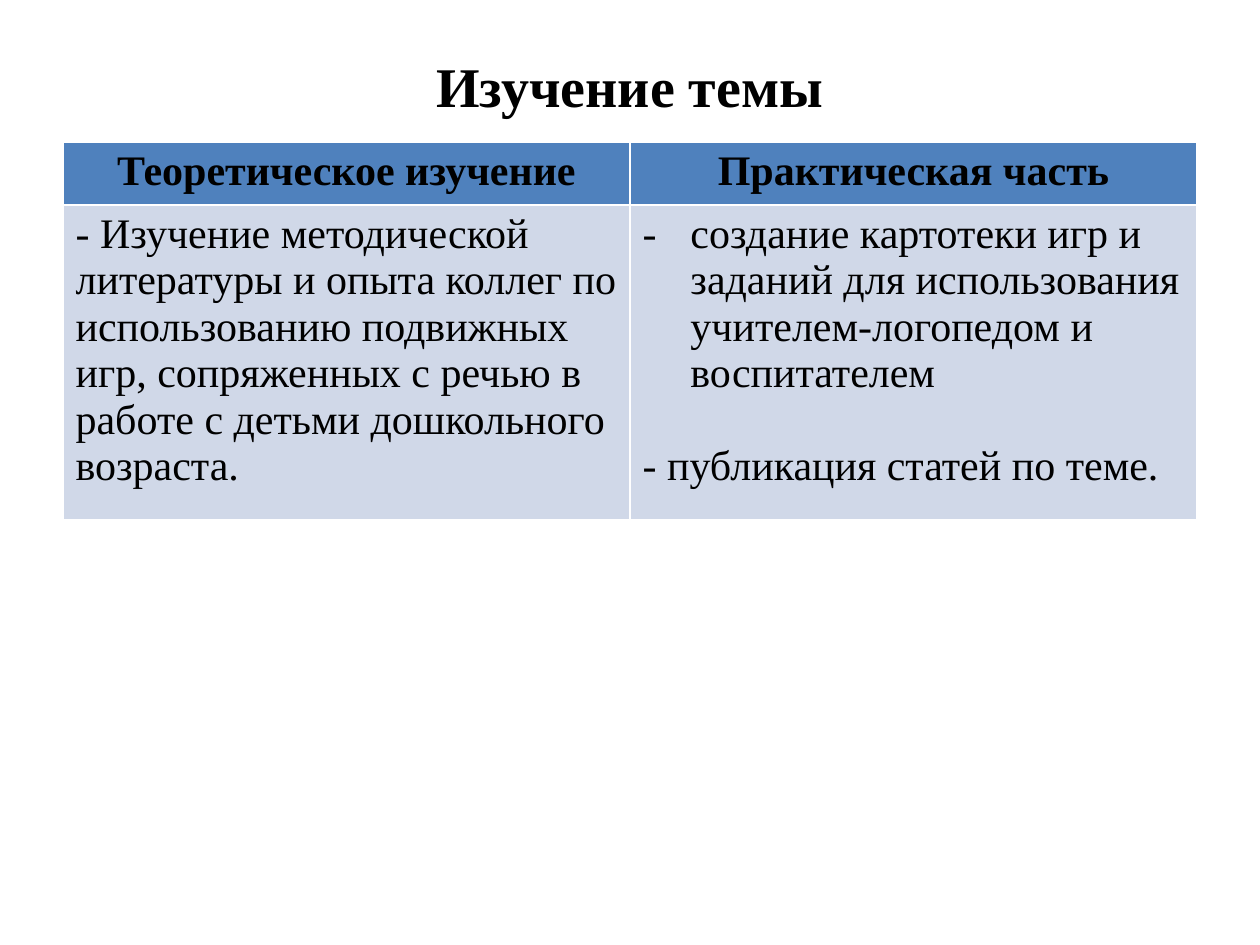
from lxml import etree
from pptx import Presentation
from pptx.dml.color import RGBColor
from pptx.enum.text import MSO_ANCHOR, PP_ALIGN
from pptx.oxml.ns import qn
from pptx.util import Inches, Pt

CENTER, LEFT = PP_ALIGN.CENTER, PP_ALIGN.LEFT
MIDDLE = MSO_ANCHOR.MIDDLE
COLORS = {"ink": "000000", "head": "4F81BD", "body": "D0D8E8"}
HEADS = ["Теоретическое изучение", "Практическая часть"]
THEORY = [
    "- Изучение методической литературы и опыта коллег по использованию "
    "подвижных игр, сопряженных с речью в работе с детьми дошкольного возраста."
]
PRACTICE = [
    "создание картотеки игр и заданий для использования "
    "учителем-логопедом и воспитателем",
    "- публикация статей по теме.",
]


class Deck:
    """Hold the style and the current slide, with lengths as shares of its size."""

    font = "Times New Roman"

    def __init__(self, wide, high):
        self.prs = Presentation()
        self.prs.slide_width = Inches(wide)
        self.prs.slide_height = Inches(high)
        self.slide = self.prs.slides.add_slide(self.prs.slide_layouts[6])

    def box(self, left, top, width, height):
        wide, high = self.prs.slide_width, self.prs.slide_height
        return [round(n) for n in (left * wide, top * high, width * wide, height * high)]

    def label(self, frame, lines, size, bold=False, align=LEFT):
        frame.text = "\n".join(lines)
        for par in frame.paragraphs:
            par.alignment = align
            for run in par.runs:
                run.font.name = self.font
                run.font.size = Pt(size)
                run.font.bold = bold
                run.font.color.rgb = RGBColor.from_string(COLORS["ink"])

    def title(self, area, text):
        frame = self.slide.shapes.add_textbox(*self.box(*area)).text_frame
        frame.word_wrap = True
        frame.vertical_anchor = MIDDLE
        self.label(frame, [text], 32, True, CENTER)

    def table(self, area, heads, bodies, share):
        place = self.box(*area)
        grid = self.slide.shapes.add_table(2, len(heads), *place).table
        grid.rows[0].height = round(place[3] * share)
        grid.rows[1].height = place[3] - grid.rows[0].height
        for col, (head, body) in enumerate(zip(heads, bodies)):
            self.cell(grid.cell(0, col), [head], "head", True, CENTER)
            self.cell(grid.cell(1, col), body, "body")
        return grid

    def cell(self, cell, lines, color, bold=False, align=LEFT):
        cell.fill.solid()
        cell.fill.fore_color.rgb = RGBColor.from_string(COLORS[color])
        self.label(cell.text_frame, lines, 24, bold, align)

    def bullet(self, par, mark, indent):
        props = par._p.get_or_add_pPr()
        props.set("marL", str(Inches(indent)))
        props.set("indent", str(-Inches(indent)))
        etree.SubElement(props, qn("a:buFont")).set("typeface", self.font)
        etree.SubElement(props, qn("a:buChar")).set("char", mark)


def main():
    deck = Deck(10, 7.5)
    deck.title((0.05, 0.04, 0.9, 0.1), "Изучение темы")
    grid = deck.table((0.05, 0.15, 0.9, 0.37), HEADS, [THEORY, PRACTICE], 1 / 6)
    first, last = grid.cell(1, 1).text_frame.paragraphs
    deck.bullet(first, "-", 0.38)
    last.space_before = Pt(26.6)
    deck.prs.save("out.pptx")


if __name__ == "__main__":
    main()
